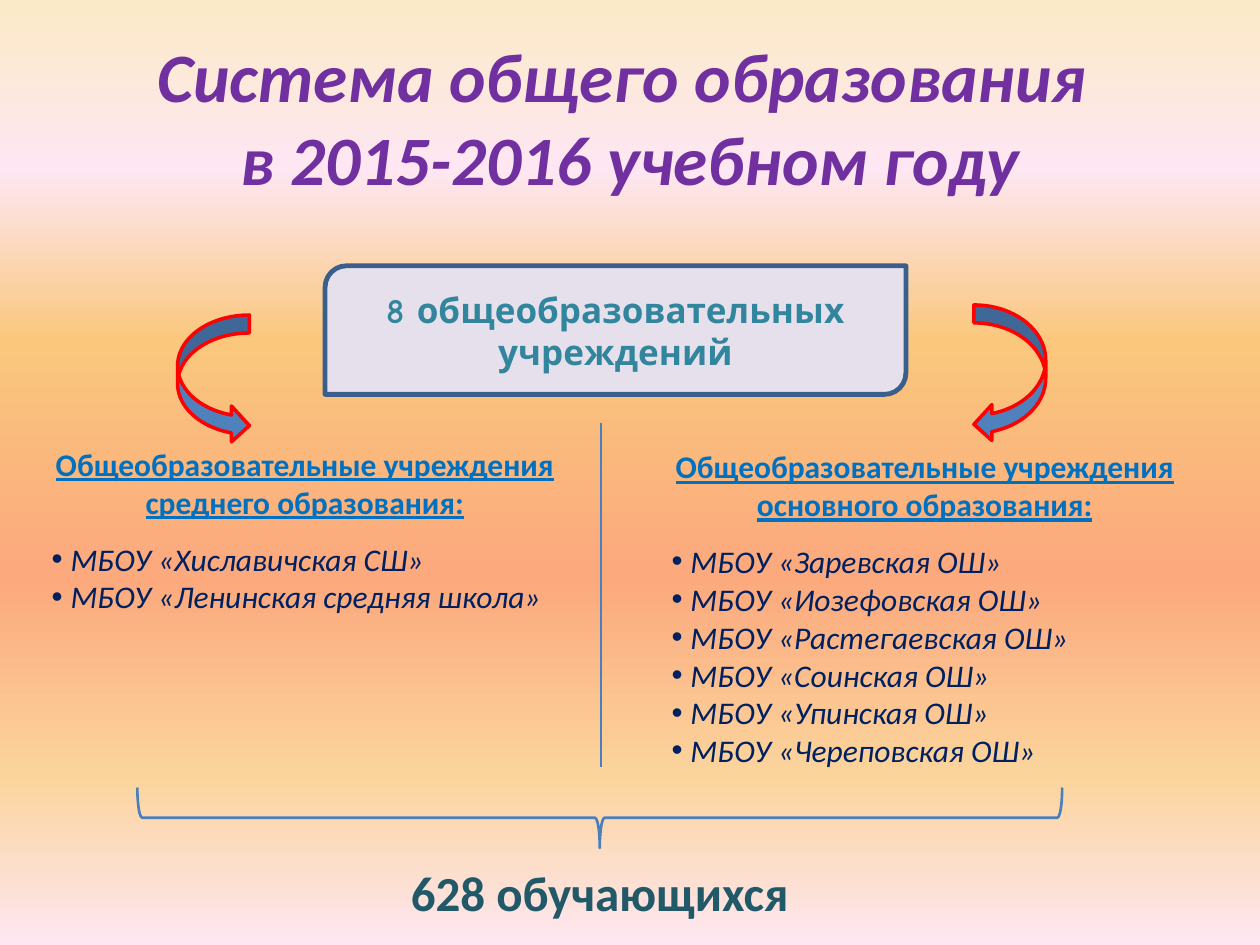
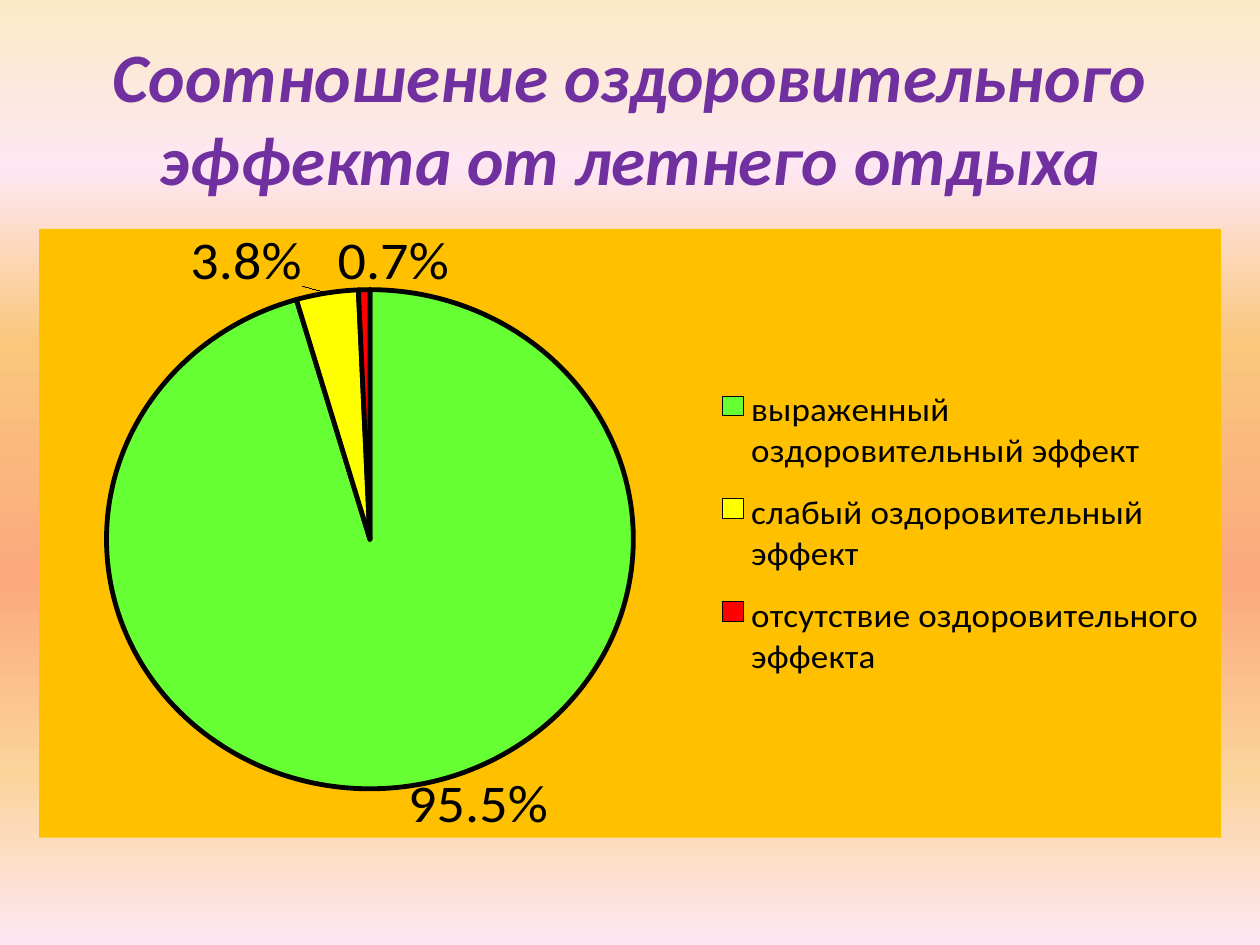
from dataclasses import dataclass
from typing import NamedTuple

from lxml.etree import SubElement
from pptx import Presentation
from pptx.chart.data import CategoryChartData
from pptx.dml.color import RGBColor
from pptx.enum.chart import XL_CHART_TYPE, XL_LABEL_POSITION as Pos, XL_LEGEND_POSITION
from pptx.enum.shapes import MSO_CONNECTOR, MSO_SHAPE as Kind
from pptx.enum.text import MSO_ANCHOR as Anchor, MSO_AUTO_SIZE, PP_ALIGN as Align
from pptx.oxml import parse_xml
from pptx.oxml.ns import nsdecls, qn
from pptx.util import Inches, Pt


@dataclass(frozen=True)
class Theme:
    font: str = "Calibri"
    box_font: str = "Comic Neue"
    title: str = "7030A0"
    head: str = "0070C0"
    item: str = "002060"
    total: str = "215968"
    box_text: str = "31859C"
    box_fill: str = "E6E0EC"
    box_line: str = "3A5F8C"
    arrow: str = "4F81BD"
    rim: str = "FF0000"
    rule: str = "4B7EBC"
    panel: str = "FFC000"
    ink: str = "000000"
    title_size: float = 39.6
    list_size: float = 18
    box_size: float = 20
    total_size: float = 28
    legend_size: float = 20
    label_size: float = 32
    sky: tuple = ((0, "FBEAC7"), (18, "FEE7F2"), (36, "FAC77D"),
                  (61, "FBA97D"), (82, "FBD49C"), (100, "FEE7F2"))


class Box(NamedTuple):
    left: float
    top: float
    width: float
    height: float


class Group(NamedTuple):
    box: Box
    head: str
    schools: list[str]


class Arrow(NamedTuple):
    kind: Kind
    box: Box


class Part(NamedTuple):
    name: str
    share: float
    color: str
    shift: float = 0


T = Theme()

GROUPS = [
    Group(Box(0.31, 3.48, 4.22, 2.03),
          "Общеобразовательные учреждения среднего образования:",
          ["МБОУ «Хиславичская СШ»", "МБОУ «Ленинская средняя школа»"]),
    Group(Box(5.23, 3.5, 4.22, 2.75),
          "Общеобразовательные учреждения основного образования:",
          [f"МБОУ «{name} ОШ»" for name in (
              "Заревская", "Иозефовская", "Растегаевская",
              "Соинская", "Упинская", "Череповская")]),
]
ARROWS = [
    Arrow(Kind.CURVED_RIGHT_ARROW, Box(1.41, 2.5, 0.57, 1.02)),
    Arrow(Kind.CURVED_LEFT_ARROW, Box(7.73, 2.42, 0.57, 1.09)),
]
PARTS = [
    Part("выраженный оздоровительный эффект", 0.955, "66FF33"),
    Part("слабый оздоровительный эффект", 0.038, "FFFF00", -0.02),
    Part("отсутствие оздоровительного эффекта", 0.007, "FF0000", 0.025),
]


def rgb(color: str) -> RGBColor:
    return RGBColor.from_string(color)


def spots(box: Box) -> list:
    return [Inches(side) for side in box]


def place(shape, box: Box) -> None:
    shape.left, shape.top, shape.width, shape.height = spots(box)


def style(para, size: float, color: str, font: str = T.font, bold: bool = False,
          italic: bool = False, under: bool = False) -> None:
    for run in para.runs:
        face = run.font
        face.name, face.size = font, Pt(size)
        face.bold, face.italic, face.underline = bold, italic, under
        face.color.rgb = rgb(color)


def set_sky(master) -> None:
    """Give every slide the gradient background through the master."""
    fill = master.background.fill
    fill.gradient()
    fill.gradient_angle = 270
    stops = master.element.find(".//" + qn("a:gsLst"))
    for stop in list(stops):
        stops.remove(stop)
    for spot, color in T.sky:
        stop = SubElement(stops, qn("a:gs"), pos=str(spot * 1000))
        SubElement(stop, qn("a:srgbClr"), val=color)


def add_slide(deck, layout: int, title: str):
    slide = deck.slides.add_slide(deck.slide_layouts[layout])
    head = slide.shapes.title
    place(head, Box(0.5, 0.3, 9, 1.25))
    frame = head.text_frame
    frame.text = title
    frame.auto_size = MSO_AUTO_SIZE.NONE
    frame.vertical_anchor = Anchor.MIDDLE
    frame.paragraphs[0].alignment = Align.CENTER
    style(frame.paragraphs[0], T.title_size, T.title, bold=True, italic=True)
    return slide


def add_shape(slide, kind: Kind, box: Box, fill: str | None, line: str, width: float):
    shape = slide.shapes.add_shape(kind, *spots(box))
    shape.shadow.inherit = False
    if fill:
        shape.fill.solid()
        shape.fill.fore_color.rgb = rgb(fill)
    else:
        shape.fill.background()
    shape.line.color.rgb = rgb(line)
    shape.line.width = Pt(width)
    return shape


def set_text(shape, text: str, size: float, color: str, font: str = T.font) -> None:
    """Centre one bold paragraph in a shape."""
    frame = shape.text_frame
    frame.text = text
    frame.word_wrap = True
    frame.vertical_anchor = Anchor.MIDDLE
    frame.paragraphs[0].alignment = Align.CENTER
    style(frame.paragraphs[0], size, color, font, bold=True)


def fill_group(body, group: Group) -> None:
    """Write an underlined heading and its bulleted schools."""
    place(body, group.box)
    frame = body.text_frame
    frame.text = "\n".join([group.head, *group.schools])
    frame.auto_size = MSO_AUTO_SIZE.NONE
    frame.vertical_anchor = Anchor.TOP
    head, *items = frame.paragraphs
    for para in frame.paragraphs:
        para.space_before = Pt(0)
        para.line_spacing = 1.0
    items[0].space_before = Pt(11)
    props = head._p.get_or_add_pPr()
    props.set("marL", "0")
    props.set("indent", "0")
    SubElement(props, qn("a:buNone"))
    head.alignment = Align.CENTER
    style(head, T.list_size, T.head, bold=True, under=True)
    for item in items:
        props = item._p.get_or_add_pPr()
        props.set("marL", str(Inches(0.15)))
        props.set("indent", str(-Inches(0.15)))
        SubElement(props, qn("a:buChar"), char="•")
        style(item, T.list_size, T.item, italic=True)


def add_rule(slide, x: float, top: float, end: float) -> None:
    rule = slide.shapes.add_connector(
        MSO_CONNECTOR.STRAIGHT, Inches(x), Inches(top), Inches(x), Inches(end))
    rule.line.color.rgb = rgb(T.rule)
    rule.line.width = Pt(1.5)
    SubElement(rule._element.spPr, qn("a:effectLst"))


def layout_xml(inner: bool = False, **sides: float):
    """Make a manual chart layout from fractions x, y, w and h."""
    target = '<c:layoutTarget val="inner"/>' if inner else ""
    modes = "".join(f'<c:{side}Mode val="edge"/>' for side in "xy") if "w" in sides else ""
    values = "".join(f'<c:{side} val="{value}"/>' for side, value in sides.items())
    return parse_xml(f'<c:layout {nsdecls("c")}><c:manualLayout>{target}{modes}{values}'
                     '</c:manualLayout></c:layout>')


def add_pie(slide, box: Box) -> None:
    data = CategoryChartData(number_format="0.0%")
    data.categories = [part.name for part in PARTS]
    data.add_series("Series 1", [part.share for part in PARTS])
    chart = slide.shapes.add_chart(XL_CHART_TYPE.PIE, *spots(box), data).chart
    chart.has_title = False
    chart.font.name, chart.font.size = T.font, Pt(T.legend_size)
    chart.font.color.rgb = rgb(T.ink)
    root = chart.element.find(qn("c:chart"))
    root.addnext(parse_xml(
        f'<c:spPr {nsdecls("c", "a")}><a:solidFill><a:srgbClr val="{T.panel}"/>'
        '</a:solidFill><a:ln><a:noFill/></a:ln></c:spPr>'))
    area = root.find(qn("c:plotArea"))
    for old in area.findall(qn("c:layout")):
        area.remove(old)
    area.insert(0, layout_xml(True, x=0.05, y=0.1, w=0.46, h=0.82))

    chart.has_legend = True
    legend = chart.legend
    legend.position = XL_LEGEND_POSITION.RIGHT
    legend.include_in_layout = False
    legend.font.name, legend.font.size = T.font, Pt(T.legend_size)
    legend.font.color.rgb = rgb(T.ink)
    node = root.find(qn("c:legend"))
    for old in node.findall(qn("c:layout")):
        node.remove(old)
    node.find(qn("c:legendPos")).addnext(layout_xml(x=0.57, y=0.23, w=0.42, h=0.54))

    plot = chart.plots[0]
    plot.vary_by_categories = True
    series = plot.series[0]
    labels = series.data_labels
    labels.show_value, labels.show_percentage = True, False
    labels.number_format, labels.number_format_is_linked = "0.0%", False
    labels.position = Pos.OUTSIDE_END
    labels.font.name, labels.font.size = T.font, Pt(T.label_size)
    labels.font.color.rgb = rgb(T.ink)
    for i, part in enumerate(PARTS):
        point = series.points[i]
        point.format.fill.solid()
        point.format.fill.fore_color.rgb = rgb(part.color)
        point.format.line.color.rgb = rgb(T.ink)
        point.format.line.width = Pt(2.75)
        if part.shift:
            label = point.data_label
            label.position = Pos.OUTSIDE_END
            label.font.name, label.font.size = T.font, Pt(T.label_size)
            label.font.color.rgb = rgb(T.ink)
    for node in series._element.iter(qn("c:dLbl")):
        mark = node.find(qn("c:idx"))
        mark.addnext(layout_xml(x=PARTS[int(mark.get("val"))].shift, y=0))


def add_schools(deck) -> None:
    slide = add_slide(deck, 3, "Система общего образования \vв 2015-2016 учебном году")
    box = add_shape(slide, Kind.ROUND_2_DIAG_RECTANGLE, Box(2.58, 2.11, 4.61, 1.02),
                    T.box_fill, T.box_line, 2.75)
    set_text(box, "8 общеобразовательных учреждений", T.box_size, T.box_text, T.box_font)
    bodies = list(slide.placeholders)[1:]
    for body, group in zip(bodies, GROUPS):
        fill_group(body, group)
    add_rule(slide, 4.77, 3.36, 6.09)
    for arrow in ARROWS:
        add_shape(slide, arrow.kind, arrow.box, T.arrow, T.rim, 2)
    brace = add_shape(slide, Kind.RIGHT_BRACE, Box(4.52, 2.82, 0.48, 7.34),
                      None, T.rule, 1.5)
    brace.rotation = 90
    brace.adjustments[0], brace.adjustments[1] = 0.08, 0.5
    total = slide.shapes.add_textbox(*spots(Box(2.73, 6.88, 4.06, 0.39)))
    set_text(total, "628 обучающихся", T.total_size, T.total)


def add_effect(deck) -> None:
    slide = add_slide(deck, 5, "Соотношение оздоровительного эффекта от летнего отдыха")
    add_pie(slide, Box(0.31, 1.72, 9.38, 5.1))


def main() -> None:
    deck = Presentation()
    deck.slide_width, deck.slide_height = Inches(10), Inches(7.5)
    set_sky(deck.slide_master)
    add_schools(deck)
    add_effect(deck)
    deck.save("out.pptx")


if __name__ == "__main__":
    main()
